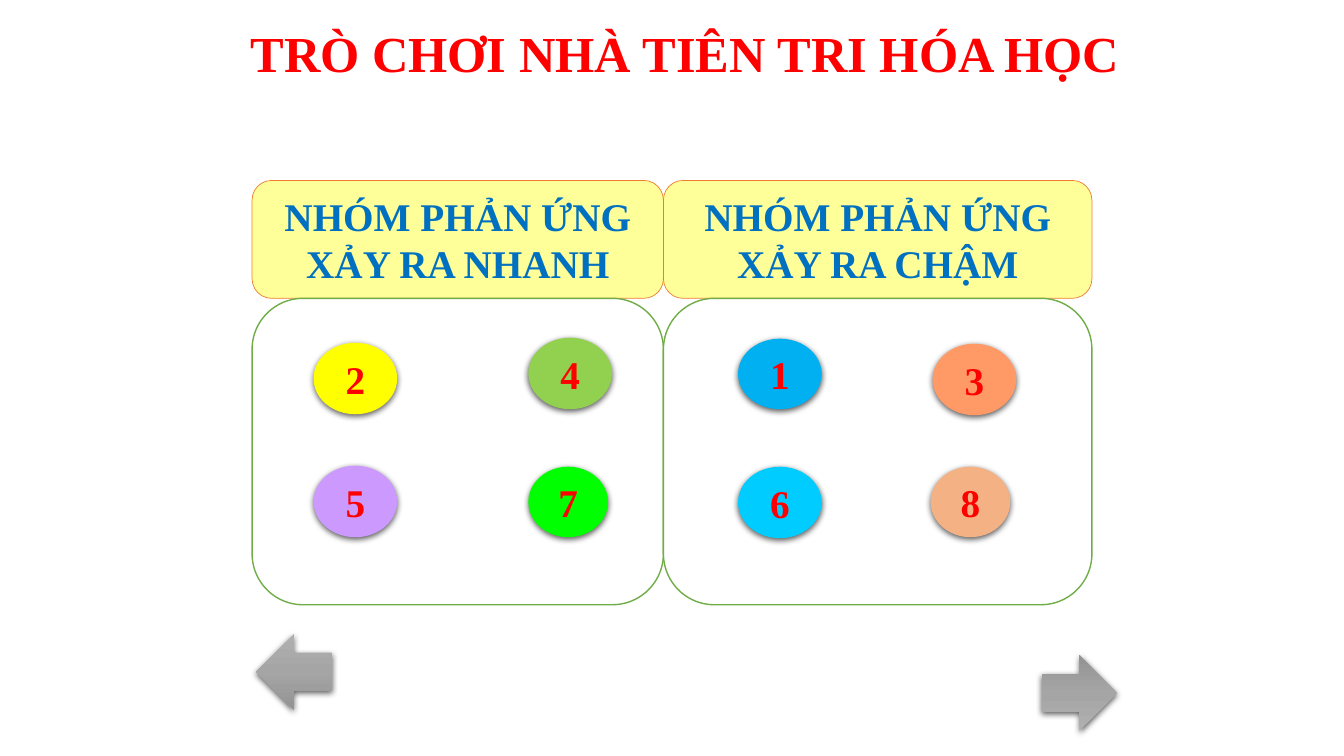
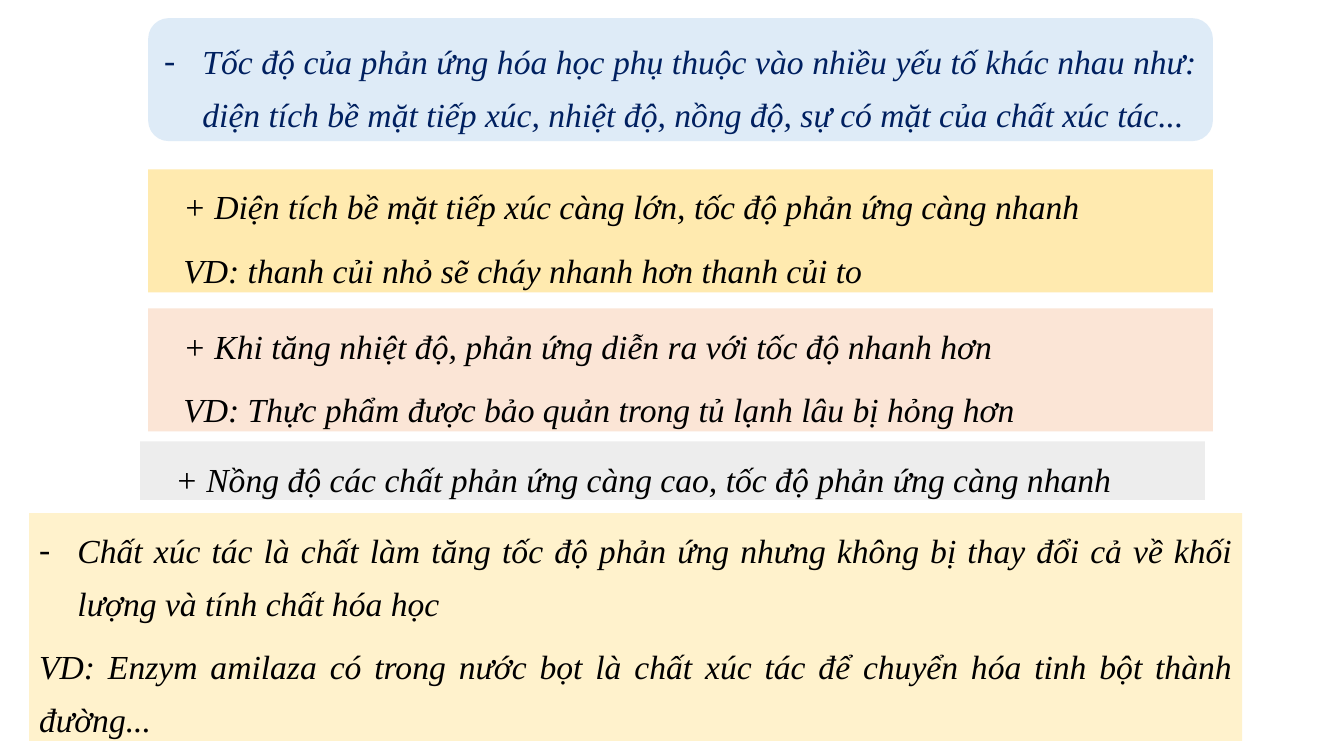
from lxml import etree
from pptx import Presentation
from pptx.dml.color import RGBColor
from pptx.enum.shapes import MSO_SHAPE
from pptx.enum.text import MSO_ANCHOR, MSO_AUTO_SIZE, PP_ALIGN
from pptx.oxml.ns import qn
from pptx.util import Emu, Pt

EMU_PER_PX = 9144  # 100 px to the inch
SLIDE_SIZE = (1333, 750)
FONT = "Times New Roman"

RECTANGLE, ROUNDED = MSO_SHAPE.RECTANGLE, MSO_SHAPE.ROUNDED_RECTANGLE
OVAL, LEFT_ARROW = MSO_SHAPE.OVAL, MSO_SHAPE.LEFT_ARROW
TOP, MIDDLE = MSO_ANCHOR.TOP, MSO_ANCHOR.MIDDLE
GROW = MSO_AUTO_SIZE.SHAPE_TO_FIT_TEXT
CENTER, JUSTIFY = PP_ALIGN.CENTER, PP_ALIGN.JUSTIFY

BLACK = RGBColor(0x00, 0x00, 0x00)
WHITE = RGBColor(0xFF, 0xFF, 0xFF)
RED = RGBColor(0xFF, 0x00, 0x00)
NAVY = RGBColor(0x00, 0x20, 0x60)
HEADING_BLUE = RGBColor(0x00, 0x70, 0xC0)
HEADING_YELLOW = RGBColor(0xFF, 0xFF, 0x99)
ORANGE = RGBColor(0xED, 0x7D, 0x31)
PANEL_GREEN = RGBColor(0x70, 0xAD, 0x47)
DIGIT_OUTLINE = RGBColor(0xBD, 0x8E, 0x00)
YELLOW = RGBColor(0xFF, 0xFF, 0x00)
SALMON = RGBColor(0xFF, 0x99, 0x66)
LEAF = RGBColor(0x92, 0xD0, 0x50)
LILAC = RGBColor(0xCC, 0x99, 0xFF)
CYAN = RGBColor(0x00, 0xCC, 0xFF)
LIME = RGBColor(0x00, 0xFF, 0x00)
PEACH = RGBColor(0xF4, 0xB1, 0x83)
SKY = RGBColor(0x00, 0xB0, 0xF0)
PALE_BLUE = RGBColor(0xDE, 0xEB, 0xF7)
GOLD = RGBColor(0xFF, 0xEA, 0xAF)
PALE_ORANGE = RGBColor(0xFB, 0xE5, 0xD6)
PALE_GREY = RGBColor(0xED, 0xED, 0xED)
CREAM = RGBColor(0xFF, 0xF2, 0xCC)
ARROW_STOPS = [
    (0, RGBColor(0xAF, 0xAF, 0xAF)),
    (50, RGBColor(0xA5, 0xA5, 0xA5)),
    (100, RGBColor(0x93, 0x93, 0x93)),
]

PANEL_COLUMNS = [
    (250, 408, "NHÓM PHẢN ỨNG XẢY RA NHANH"),
    (658, 425, "NHÓM PHẢN ỨNG XẢY RA CHẬM"),
]
BALLS = [
    ("2", (311, 340, 83, 71), YELLOW),
    ("3", (925, 341, 83, 71), SALMON),
    ("4", (524, 335, 83, 71), LEAF),
    ("5", (311, 462, 83, 71), LILAC),
    ("6", (732, 463, 83, 71), CYAN),
    ("7", (524, 463, 79, 70), LIME),
    ("8", (923, 463, 79, 70), PEACH),
    ("1", (732, 336, 83, 70), SKY),
]

# Paragraph styles: left margin and first-line indent in px, bullet
DASH = (38, -38, "-")
INDENTED = (25, 0, None)
FLUSH = (0, 0, None)

NOTES = [
    (ROUNDED, (147, 18, 1056, 122), PALE_BLUE, NAVY, [
        (DASH, "Tốc độ của phản ứng hóa học phụ thuộc vào nhiều yếu tố khác nhau như: "
               "diện tích bề mặt tiếp xúc, nhiệt độ, nồng độ, sự có mặt của chất xúc tác..."),
    ]),
    (RECTANGLE, (147, 168, 1056, 122), GOLD, BLACK, [
        (INDENTED, "+ Diện tích bề mặt tiếp xúc càng lớn, tốc độ phản ứng càng nhanh"),
        (INDENTED, "VD: thanh củi nhỏ sẽ cháy nhanh hơn thanh củi to"),
    ]),
    (RECTANGLE, (147, 306, 1056, 122), PALE_ORANGE, BLACK, [
        (INDENTED, "+ Khi tăng nhiệt độ, phản ứng diễn ra với tốc độ nhanh hơn"),
        (INDENTED, "VD: Thực phẩm được bảo quản trong tủ lạnh lâu bị hỏng hơn"),
    ]),
    (RECTANGLE, (139, 438, 1056, 58), PALE_GREY, BLACK, [
        (INDENTED, "+ Nồng độ các chất phản ứng càng cao, tốc độ phản ứng càng nhanh"),
    ]),
    (RECTANGLE, (29, 509, 1203, 226), CREAM, BLACK, [
        (DASH, "Chất xúc tác là chất làm tăng tốc độ phản ứng nhưng không bị thay đổi "
               "cả về khối lượng và tính chất hóa học"),
        (FLUSH, "VD: Enzym amilaza có trong nước bọt là chất xúc tác để chuyển hóa "
                "tinh bột thành đường..."),
    ]),
]


def px(length):
    return Emu(length * EMU_PER_PX)


def add_color(parent, color):
    return etree.SubElement(parent, qn("a:srgbClr"), val=str(color))


def add_shape(slide, kind, box, fill=None, line=None, line_width=1):
    shape = slide.shapes.add_shape(kind, *map(px, box))
    shape.shadow.inherit = False
    if fill is not None:
        shape.fill.solid()
        shape.fill.fore_color.rgb = fill
    if line is None:
        shape.line.fill.background()
    else:
        shape.line.color.rgb = line
        shape.line.width = Pt(line_width)
    return shape


def add_drop_shadow(shape):
    effects = shape.element.spPr.find(qn("a:effectLst"))
    shadow = etree.SubElement(
        effects, qn("a:outerShdw"), blurRad=str(Pt(4.5)), dist=str(Pt(1.5)),
        dir="5400000", algn="ctr", rotWithShape="0")
    etree.SubElement(add_color(shadow, BLACK), qn("a:alpha"), val="63000")


def add_run(paragraph, text, size, color, bold=False, italic=False):
    run = paragraph.add_run()
    run.text = text
    font = run.font
    font.name, font.size = FONT, Pt(size)
    font.bold, font.italic = bold, italic
    font.color.rgb = color
    return run


def outline_text(run, color):
    line = etree.Element(qn("a:ln"), w=str(Pt(0.71)))
    add_color(etree.SubElement(line, qn("a:solidFill")), color)
    run.font._element.insert(0, line) if hasattr(run.font, "_element") else \
        run._r.get_or_add_rPr().insert(0, line)


def add_centered_text(shape, text, size, color, anchor=MIDDLE):
    frame = shape.text_frame
    frame.word_wrap = True
    frame.vertical_anchor = anchor
    paragraph = frame.paragraphs[0]
    paragraph.alignment = CENTER
    return add_run(paragraph, text, size, color, bold=True)


def add_title(slide, text):
    title = slide.shapes.add_textbox(*map(px, (192, 17, 975, 71)))
    add_centered_text(title, text, 36, RED, TOP)
    title.text_frame.auto_size = GROW


def add_ball(slide, digit, box, fill):
    ball = add_shape(slide, OVAL, box, fill)
    add_drop_shadow(ball)
    outline_text(add_centered_text(ball, digit, 28, RED), DIGIT_OUTLINE)


def add_arrow(slide, left, top, rotation=0):
    arrow = add_shape(slide, LEFT_ARROW, (left, top, 75, 75))
    arrow.rotation = rotation
    arrow.fill.gradient()
    arrow.fill.gradient_angle = 270
    stops = arrow.element.spPr.find(qn("a:gradFill")).find(qn("a:gsLst"))
    stops.clear()
    for percent, color in ARROW_STOPS:
        add_color(etree.SubElement(stops, qn("a:gs"), pos=str(percent * 1000)), color)
    add_drop_shadow(arrow)


def style_note_paragraph(paragraph, margin, indent, bullet):
    properties = paragraph._p.get_or_add_pPr()
    properties.set("marL", str(px(margin)))
    properties.set("indent", str(px(indent)))
    if bullet:
        etree.SubElement(properties, qn("a:buFont"), typeface=FONT)
        etree.SubElement(properties, qn("a:buChar"), char=bullet)
    paragraph.alignment = JUSTIFY
    paragraph.line_spacing = 1.3
    paragraph.space_after = Pt(8)


def add_note(slide, kind, box, fill, color, lines):
    frame = add_shape(slide, kind, box, fill).text_frame
    frame.word_wrap = True
    frame.auto_size = GROW
    frame.vertical_anchor = TOP
    for index, (style, text) in enumerate(lines):
        paragraph = frame.add_paragraph() if index else frame.paragraphs[0]
        style_note_paragraph(paragraph, *style)
        add_run(paragraph, text, 24, color, italic=True)


def build_game_slide(slide):
    add_title(slide, "TRÒ CHƠI NHÀ TIÊN TRI HÓA HỌC")
    for left, width, heading in PANEL_COLUMNS:
        header = add_shape(slide, ROUNDED, (left, 179, width, 117),
                           HEADING_YELLOW, ORANGE, 0.5)
        add_centered_text(header, heading, 28, HEADING_BLUE)
        add_shape(slide, ROUNDED, (left, 296, width, 304), WHITE, PANEL_GREEN)
    for ball in BALLS:
        add_ball(slide, *ball)
    add_arrow(slide, 1033, 650, rotation=180)
    add_arrow(slide, 254, 629)


def build_factors_slide(slide):
    for note in NOTES:
        add_note(slide, *note)


def main():
    presentation = Presentation()
    presentation.slide_width, presentation.slide_height = map(px, SLIDE_SIZE)
    blank = presentation.slide_layouts[6]
    for build in (build_game_slide, build_factors_slide):
        build(presentation.slides.add_slide(blank))
    presentation.save("out.pptx")


if __name__ == "__main__":
    main()
